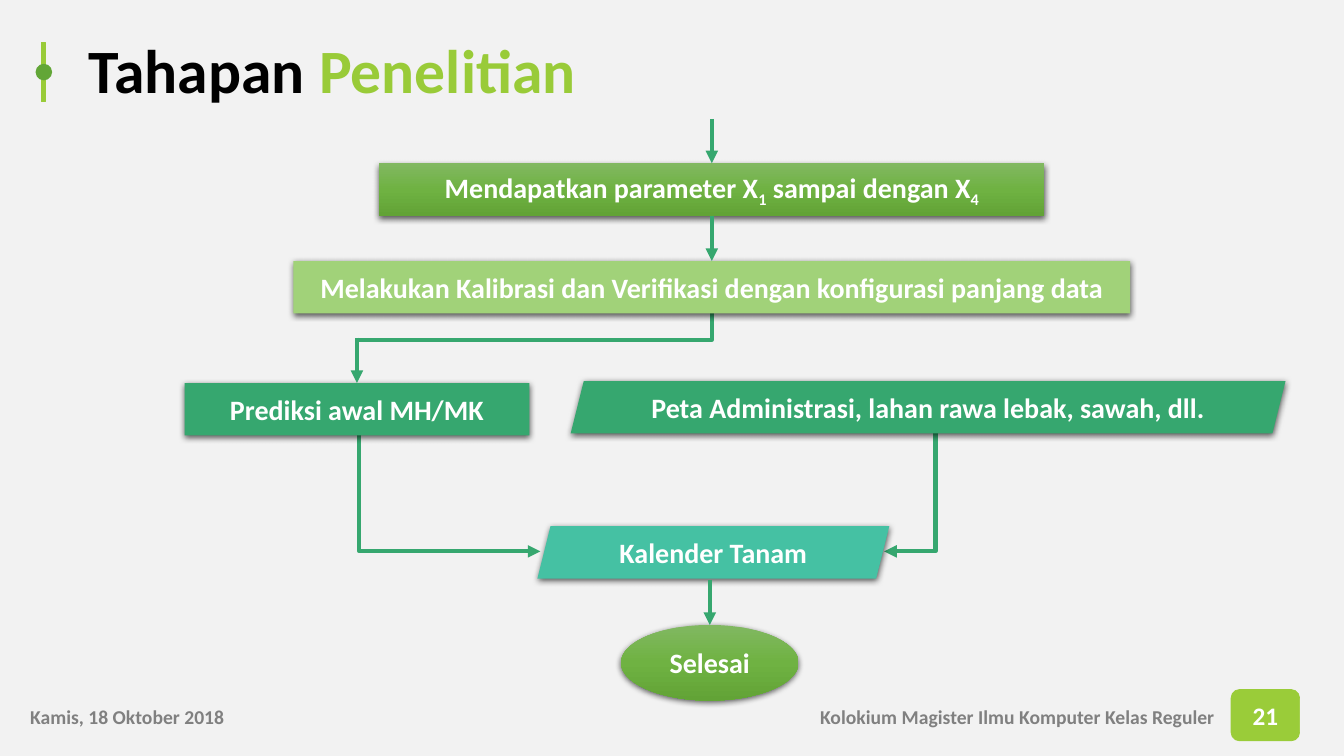
from dataclasses import dataclass

from lxml import etree
from pptx import Presentation
from pptx.dml.color import RGBColor
from pptx.enum.shapes import MSO_CONNECTOR, MSO_SHAPE
from pptx.enum.text import MSO_ANCHOR, MSO_AUTO_SIZE, PP_ALIGN
from pptx.oxml.ns import qn
from pptx.util import Inches, Pt

RECTANGLE, ROUNDED = MSO_SHAPE.RECTANGLE, MSO_SHAPE.ROUNDED_RECTANGLE
OVAL, PARALLELOGRAM = MSO_SHAPE.OVAL, MSO_SHAPE.PARALLELOGRAM
STRAIGHT, ELBOW = MSO_CONNECTOR.STRAIGHT, MSO_CONNECTOR.ELBOW
LEFT, CENTER = PP_ALIGN.LEFT, PP_ALIGN.CENTER
MIDDLE, NO_AUTOFIT = MSO_ANCHOR.MIDDLE, MSO_AUTO_SIZE.NONE
TOP, BOTTOM = 0, 2
FONT = "Calibri"
LIME, GREEN, WHITE = "99CB38", "36A76F", "FFFFFF"
GRADIENT = ("81B861", "6FB242", "62A336")


@dataclass
class Step:
    name: str
    kind: int
    left: float
    top: float
    width: float
    height: float
    colours: tuple
    spans: tuple


@dataclass
class Elbow:
    start: tuple
    end: tuple
    bend: float
    arrow: bool


@dataclass
class Arrow:
    start: tuple
    end: tuple
    source: str
    target: str


STEPS = [
    Step("parameter", RECTANGLE, 3.76, 1.62, 6.6, 0.52, GRADIENT,
         ("Mendapatkan parameter X", "1", " sampai dengan X", "4")),
    Step("calibration", RECTANGLE, 2.91, 2.59, 8.3, 0.52, ("A1D279",),
         ("Melakukan Kalibrasi dan Verifikasi dengan konfigurasi panjang data",)),
    Step("prediction", RECTANGLE, 1.83, 3.8, 3.42, 0.52, (GREEN,), ("Prediksi awal MH/MK",)),
    Step("finish", OVAL, 6.16, 6.2, 1.76, 0.75, GRADIENT, ("Selesai",)),
    Step("maps", PARALLELOGRAM, 5.66, 3.78, 7.09, 0.52, (GREEN,),
         ("Peta Administrasi, lahan rawa lebak, sawah, dll.",)),
    Step("calendar", PARALLELOGRAM, 5.33, 5.22, 3.49, 0.52, ("45C1A3",), ("Kalender Tanam",)),
]
ELBOWS = [
    Elbow((7.06, 3.11), (3.54, 3.37), 0, False),
    Elbow((3.77, 4.23), (5.36, 5.47), -0.13, True),
    Elbow((10.04, 4.23), (8.77, 5.47), 0.6, True),
]
ARROWS = [
    Arrow((7.06, 1.18), (7.06, 1.62), "", "parameter"),
    Arrow((7.06, 2.14), (7.06, 2.59), "parameter", "calibration"),
    Arrow((3.54, 3.35), (3.54, 3.8), "", "prediction"),
    Arrow((7.04, 5.75), (7.04, 6.2), "", "finish"),
]


def colour(code: str) -> RGBColor:
    return RGBColor.from_string(code)


def set_font(font, size: float, code: str) -> None:
    font.name, font.size, font.bold = FONT, Pt(size), True
    font.color.rgb = colour(code)


def add_shape(page, kind: int, left: float, top: float, width: float, height: float,
              colours: tuple, line_width: float = 0):
    shape = page.shapes.add_shape(kind, Inches(left), Inches(top), Inches(width), Inches(height))
    shape.shadow.inherit = False
    if len(colours) == 1:
        shape.fill.solid()
        shape.fill.fore_color.rgb = colour(colours[0])
    else:
        shape.fill.gradient()
        shape.fill.gradient_angle = 270
        stops = next(shape._element.spPr.iter(qn("a:gsLst")))
        for stop in list(stops):
            stops.remove(stop)
        for index, code in enumerate(colours):
            position = 100000 * index // (len(colours) - 1)
            stop = etree.SubElement(stops, qn("a:gs"), pos=str(position))
            etree.SubElement(stop, qn("a:srgbClr"), val=code)
    if line_width:
        shape.line.color.rgb = colour(colours[0])
        shape.line.width = Pt(line_width)
    else:
        shape.line.fill.background()
    return shape


def write_centred(shape, spans: tuple, size: float) -> None:
    frame = shape.text_frame
    frame.word_wrap = True
    frame.vertical_anchor = MIDDLE
    para = frame.paragraphs[0]
    para.alignment = CENTER
    set_font(para.font, size, WHITE)
    for index, text in enumerate(spans):
        span = para.add_run()
        span.text = text
        if index % 2:
            span._r.get_or_add_rPr().set("baseline", "-25000")


def add_step(page, step: Step):
    shape = add_shape(page, step.kind, step.left, step.top, step.width, step.height, step.colours)
    effects = shape._element.spPr.find(qn("a:effectLst"))
    shadow = etree.SubElement(effects, qn("a:outerShdw"), blurRad=str(Pt(4.5)),
                              dist=str(Pt(1.5)), dir="5400000", algn="ctr", rotWithShape="0")
    black = etree.SubElement(shadow, qn("a:srgbClr"), val="000000")
    etree.SubElement(black, qn("a:alpha"), val="63000")
    write_centred(shape, step.spans, 20)
    return shape


def add_line(page, kind: int, start: tuple, end: tuple, arrow: bool):
    line = page.shapes.add_connector(kind, *map(Inches, start + end))
    line.line.color.rgb = colour(GREEN)
    line.line.width = Pt(3)
    if arrow:
        etree.SubElement(line.line._get_or_add_ln(), qn("a:tailEnd"), type="triangle")
    etree.SubElement(line._element.spPr, qn("a:effectLst"))
    return line


def add_elbow(page, elbow: Elbow) -> None:
    line = add_line(page, ELBOW, elbow.start, elbow.end, elbow.arrow)
    guides = next(line._element.spPr.iter(qn("a:avLst")))
    etree.SubElement(guides, qn("a:gd"), name="adj1", fmla=f"val {round(elbow.bend * 100000)}")


def add_arrow(page, arrow: Arrow, boxes: dict) -> None:
    line = add_line(page, STRAIGHT, arrow.start, arrow.end, True)
    if arrow.source:
        line.begin_connect(boxes[arrow.source], BOTTOM)
    line.end_connect(boxes[arrow.target], TOP)


def add_title(page) -> None:
    title = page.shapes.title
    title.left, title.top, title.width, title.height = map(Inches, (0.78, 0.24, 12.1, 0.98))
    frame = title.text_frame
    frame.vertical_anchor, frame.auto_size = MIDDLE, NO_AUTOFIT
    para = frame.paragraphs[0]
    para.alignment, para.line_spacing = LEFT, 0.9
    for text, code in (("Tahapan ", "000000"), ("Penelitian", LIME)):
        span = para.add_run()
        span.text = text
        set_font(span.font, 44, code)


def add_footer(page) -> None:
    badge = add_shape(page, ROUNDED, 12.21, 6.84, 0.68, 0.51, ("9ACC39",), 0.5)
    write_centred(badge, ("21",), 18)
    box = page.shapes.add_textbox(*map(Inches, (0.2, 6.94, 12.69, 0.34)))
    box.text_frame.word_wrap = True
    para = box.text_frame.paragraphs[0]
    para.text = "Kamis, 18 Oktober 2018\tKolokium Magister Ilmu Komputer Kelas Reguler"
    tabs = etree.SubElement(para._p.get_or_add_pPr(), qn("a:tabLst"))
    etree.SubElement(tabs, qn("a:tab"), pos=str(Inches(11.75)), algn="r")
    set_font(para.font, 14, "808080")


def main() -> None:
    deck = Presentation()
    deck.slide_width, deck.slide_height = Inches(13.33), Inches(7.5)
    page = deck.slides.add_slide(deck.slide_layouts[5])
    page.background.fill.solid()
    page.background.fill.fore_color.rgb = colour("F2F2F2")
    add_title(page)
    add_footer(page)
    add_shape(page, RECTANGLE, 0.41, 0.42, 0.04, 0.59, (LIME,), 1)
    add_shape(page, OVAL, 0.36, 0.64, 0.15, 0.15, ("62A637",), 1)
    for elbow in ELBOWS:
        add_elbow(page, elbow)
    boxes = {step.name: add_step(page, step) for step in STEPS}
    for arrow in ARROWS:
        add_arrow(page, arrow, boxes)
    deck.save("out.pptx")


if __name__ == "__main__":
    main()
